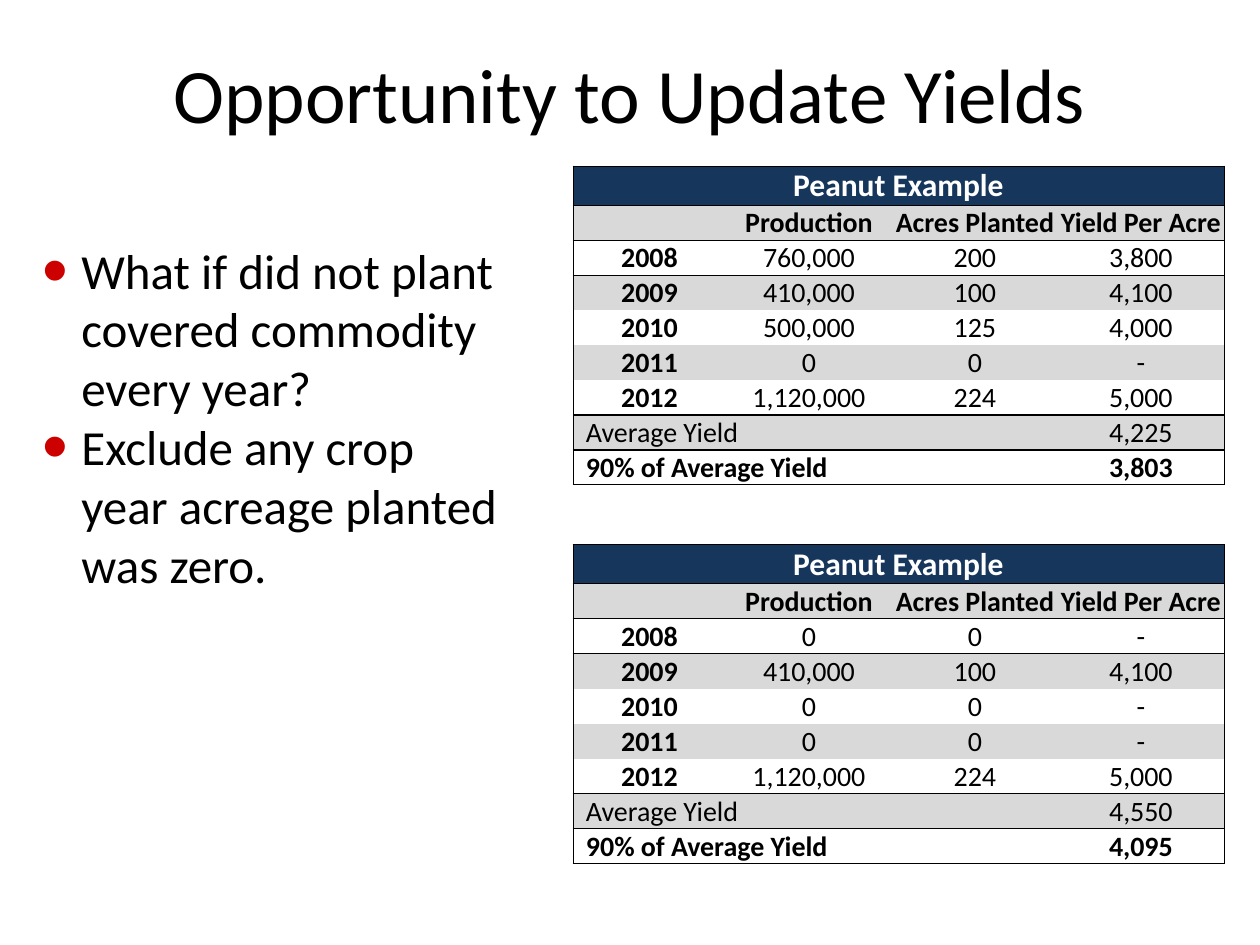
from lxml.etree import SubElement
from pptx import Presentation
from pptx.dml.color import RGBColor
from pptx.enum.text import MSO_ANCHOR as Anchor, PP_ALIGN as Align
from pptx.oxml.ns import qn
from pptx.util import Pt

PX = 914400 // 126
FONT = "Calibri"
BLACK = RGBColor(0x00, 0x00, 0x00)
WHITE = RGBColor(0xFF, 0xFF, 0xFF)
NAVY = RGBColor(0x16, 0x36, 0x5C)
GRAY = RGBColor(0xD9, 0xD9, 0xD9)
RED = RGBColor(0xCD, 0x00, 0x00)
PLAIN_STYLE = "{2D5ABB26-0587-4C30-8999-92F81FD0307C}"

TITLE = "Opportunity to Update Yields"
BULLETS = ["What if did not plant covered commodity every year?",
           "Exclude any crop year acreage planted was zero."]
HEADING = [("Peanut Example", "", "", ""),
           ("", "Production", "Acres Planted", "Yield Per Acre")]
EXAMPLES = [
    [("2008", "760,000", "200", "3,800"),
     ("2009", "410,000", "100", "4,100"),
     ("2010", "500,000", "125", "4,000"),
     ("2011", "0", "0", "-"),
     ("2012", "1,120,000", "224", "5,000"),
     ("Average Yield", "", "", "4,225"),
     ("90% of Average Yield", "", "", "3,803")],
    [("2008", "0", "0", "-"),
     ("2009", "410,000", "100", "4,100"),
     ("2010", "0", "0", "-"),
     ("2011", "0", "0", "-"),
     ("2012", "1,120,000", "224", "5,000"),
     ("Average Yield", "", "", "4,550"),
     ("90% of Average Yield", "", "", "4,095")],
]
TITLE_BOX = (63, 14, 1134, 158)
BULLET_BOX = (30, 234, 489, 369)
TABLE_LEFT, TABLE_TOP = 573, 166
COLUMN_WIDTHS = (153, 166, 166, 166)
BANNER_HEIGHT, ROW_HEIGHT, GAP_HEIGHT, GAP_ROWS = 39, 35, 30, 2
BULLET_INDENT, LABEL_INDENT = 39, 13
BANNER, HEADER, LAST_YEAR, AVERAGE, LAST = 0, 1, 6, 7, 8
RULES_BELOW = {BANNER: 0.5, HEADER: 0.5, LAST_YEAR: 1, LAST: 1}


def write(paragraph, text, size, color=BLACK, bold=False, align=Align.LEFT, bullet=False):
    """Put formatted text in a paragraph."""
    paragraph.alignment = align
    if bullet:
        properties = paragraph._p.get_or_add_pPr()
        properties.set("marL", str(BULLET_INDENT * PX))
        properties.set("indent", str(-BULLET_INDENT * PX))
        SubElement(SubElement(properties, qn("a:buClr")), qn("a:srgbClr"), val=str(RED))
        SubElement(properties, qn("a:buSzPct"), val="150000")
        SubElement(properties, qn("a:buFont"), typeface="Arial")
        SubElement(properties, qn("a:buChar"), char="•")
    if not text:
        SubElement(paragraph._p, qn("a:endParaRPr"), sz=str(size * 100))
        return
    run = paragraph.add_run()
    run.text = text
    font = run.font
    font.name, font.size, font.bold = FONT, Pt(size), bold
    font.color.rgb = color


def add_text_box(slide, box, anchor):
    """Add a wrapping text box and return its text frame."""
    frame = slide.shapes.add_textbox(*(length * PX for length in box)).text_frame
    frame.word_wrap = True
    frame.vertical_anchor = anchor
    return frame


def set_borders(cell, **widths):
    """Draw the black borders whose width in points is given."""
    properties = cell._tc.get_or_add_tcPr()
    for side in "LRTB":
        if widths.get(side):
            line = SubElement(properties, qn(f"a:ln{side}"), w=str(Pt(widths[side])))
            SubElement(SubElement(line, qn("a:solidFill")), qn("a:srgbClr"), val=str(BLACK))


def set_cell(cell, text, row, column):
    """Format one cell of an example by its row and column."""
    set_borders(cell,
                L=0.5 if column == 0 else 0,
                R=0.5 if column == 3 or row == BANNER else 0,
                T=0.5 if row == BANNER else RULES_BELOW.get(row - 1),
                B=RULES_BELOW.get(row))
    if row == BANNER or row % 2:
        cell.fill.solid()
        cell.fill.fore_color.rgb = NAVY if row == BANNER else GRAY
    else:
        cell.fill.background()
    cell.vertical_anchor = Anchor.BOTTOM
    is_label = row >= AVERAGE and column == 0
    cell.margin_left = (LABEL_INDENT if is_label else 1) * PX
    cell.margin_right = cell.margin_top = PX
    cell.margin_bottom = 0
    write(cell.text_frame.paragraphs[0], text,
          size=18 if row == BANNER else 16,
          color=WHITE if row == BANNER else BLACK,
          bold=row in (BANNER, HEADER, LAST) or (column == 0 and row < AVERAGE),
          align=Align.LEFT if is_label else Align.CENTER)


def add_examples(slide):
    """Add both examples as one table with gap rows between them."""
    block_heights = [BANNER_HEIGHT] + [ROW_HEIGHT] * LAST
    heights = block_heights + [GAP_HEIGHT] * GAP_ROWS + block_heights
    table = slide.shapes.add_table(
        len(heights), len(COLUMN_WIDTHS), TABLE_LEFT * PX, TABLE_TOP * PX,
        sum(COLUMN_WIDTHS) * PX, sum(heights) * PX).table
    table.first_row = table.horz_banding = False
    table._tbl.tblPr.find(qn("a:tableStyleId")).text = PLAIN_STYLE
    for column, width in zip(table.columns, COLUMN_WIDTHS):
        column.width = width * PX
    for row, height in zip(table.rows, heights):
        row.height = height * PX

    for index, example in enumerate(EXAMPLES):
        start = index * (len(block_heights) + GAP_ROWS)
        for row, values in enumerate(HEADING + example):
            for column, text in enumerate(values):
                set_cell(table.cell(start + row, column), text, row, column)
        for row, last_column in ((BANNER, 3), (AVERAGE, 1), (LAST, 1)):
            table.cell(start + row, 0).merge(table.cell(start + row, last_column))

    for row in range(len(block_heights), len(block_heights) + GAP_ROWS):
        for cell in table.rows[row].cells:
            cell.fill.background()
            cell.margin_top = cell.margin_bottom = 0
            write(cell.text_frame.paragraphs[0], "", size=10)


def main():
    """Build and save the slide."""
    presentation = Presentation()
    presentation.slide_width, presentation.slide_height = 1260 * PX, 945 * PX
    slide = presentation.slides.add_slide(presentation.slide_layouts[6])
    title = add_text_box(slide, TITLE_BOX, Anchor.MIDDLE)
    write(title.paragraphs[0], TITLE, size=44, align=Align.CENTER)
    body = add_text_box(slide, BULLET_BOX, Anchor.TOP)
    for index, text in enumerate(BULLETS):
        paragraph = body.add_paragraph() if index else body.paragraphs[0]
        write(paragraph, text, size=28, bullet=True)
    add_examples(slide)
    presentation.save("out.pptx")


if __name__ == "__main__":
    main()
